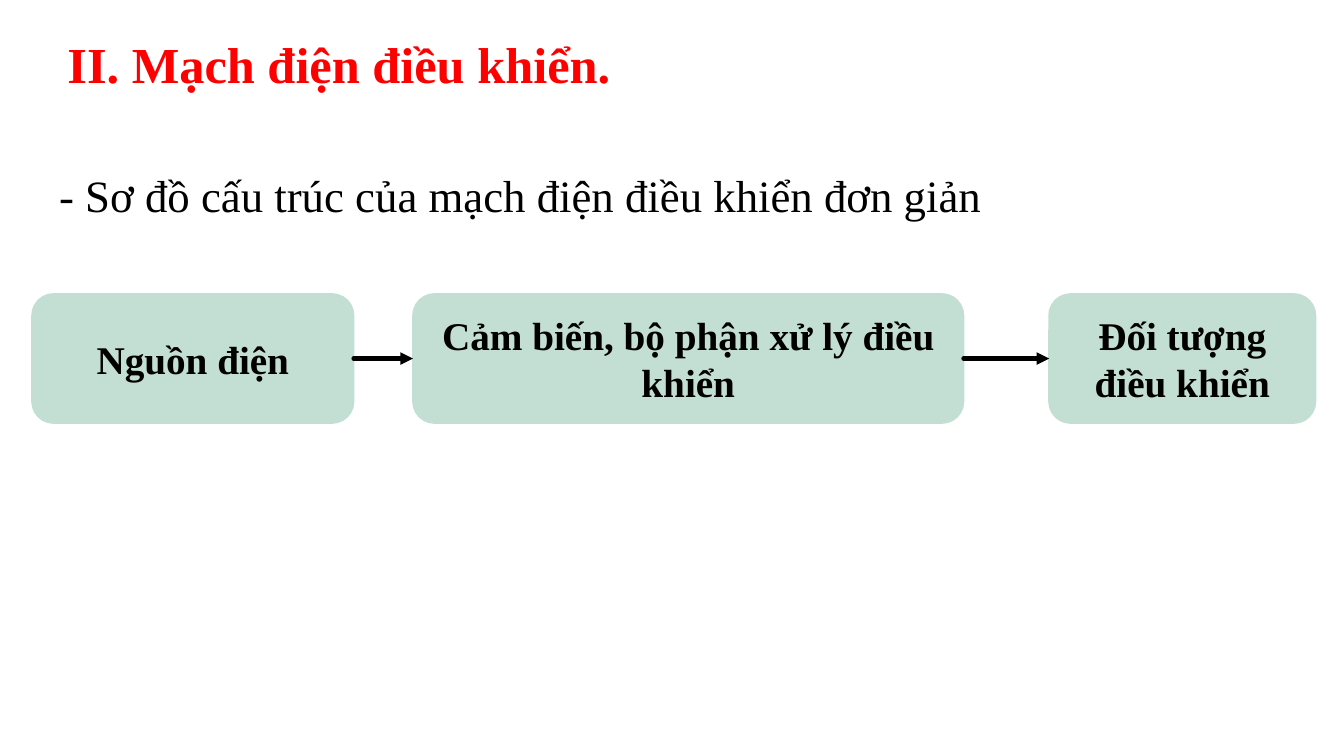
"""Build a slide showing the structure of a simple control circuit."""
from dataclasses import dataclass
from itertools import pairwise

from lxml import etree
from pptx import Presentation
from pptx.dml.color import RGBColor
from pptx.enum.shapes import MSO_CONNECTOR, MSO_SHAPE
from pptx.enum.text import MSO_ANCHOR, MSO_AUTO_SIZE, PP_ALIGN
from pptx.oxml.ns import qn
from pptx.shapes.autoshape import Shape
from pptx.slide import Slide
from pptx.text.text import TextFrame
from pptx.util import Cm, Pt

STRAIGHT = MSO_CONNECTOR.STRAIGHT
ROUNDED = MSO_SHAPE.ROUNDED_RECTANGLE
MIDDLE = MSO_ANCHOR.MIDDLE
FIT_SHAPE = MSO_AUTO_SIZE.SHAPE_TO_FIT_TEXT
LEFT, CENTER = PP_ALIGN.LEFT, PP_ALIGN.CENTER

BLACK = RGBColor(0x00, 0x00, 0x00)
RED = RGBColor(0xFF, 0x00, 0x00)
GREEN = RGBColor(0xC3, 0xDE, 0xD3)

FONT = "Times New Roman"
BLOCK_TOP, BLOCK_HEIGHT = 7.41, 3.25
LEFT_SIDE, RIGHT_SIDE = 1, 3


@dataclass(frozen=True)
class Heading:
    text: str
    left: float
    top: float
    width: float
    height: float
    size: int
    color: RGBColor
    bold: bool


@dataclass(frozen=True)
class Block:
    text: str
    left: float
    width: float


HEADINGS = [
    Heading("II. Mạch điện điều khiển.", 1.45, 0.71, 32, 1.8, 36, RED, True),
    Heading("- Sơ đồ cấu trúc của mạch điện điều khiển đơn giản",
            1.24, 4.11, 28.14, 1.63, 32, BLACK, False),
]
BLOCKS = [
    Block("Nguồn điện", 0.81, 8.1),
    Block("Cảm biến, bộ phận xử lý điều khiển", 10.41, 13.87),
    Block("Đối tượng điều khiển", 26.44, 6.71),
]


def write(tf: TextFrame, text: str, size: int, color: RGBColor,
          bold: bool, align: PP_ALIGN) -> None:
    tf.word_wrap = True
    p = tf.paragraphs[0]
    p.text = text
    p.alignment = align
    p.font.name = FONT
    p.font.size = Pt(size)
    p.font.bold = bold
    p.font.color.rgb = color


def add_heading(s: Slide, heading: Heading) -> None:
    sp = s.shapes.add_textbox(Cm(heading.left), Cm(heading.top),
                              Cm(heading.width), Cm(heading.height))
    write(sp.text_frame, heading.text, heading.size, heading.color,
          heading.bold, LEFT)
    sp.text_frame.auto_size = FIT_SHAPE


def add_block(s: Slide, block: Block) -> Shape:
    sp = s.shapes.add_shape(ROUNDED, Cm(block.left), Cm(BLOCK_TOP),
                            Cm(block.width), Cm(BLOCK_HEIGHT))
    sp.shadow.inherit = False
    sp.fill.solid()
    sp.fill.fore_color.rgb = GREEN
    sp.line.color.rgb = GREEN
    sp.line.width = Pt(1.25)
    sp.text_frame.vertical_anchor = MIDDLE
    write(sp.text_frame, block.text, 28, BLACK, True, CENTER)
    return sp


def add_arrow(s: Slide, start: Shape, end: Shape) -> None:
    arrow = s.shapes.add_connector(STRAIGHT, 0, 0, 0, 0)
    arrow.begin_connect(start, RIGHT_SIDE)
    arrow.end_connect(end, LEFT_SIDE)
    arrow.line.color.rgb = BLACK
    arrow.line.width = Pt(3)
    ln = arrow.line._get_or_add_ln()
    ln.set("cap", "rnd")
    etree.SubElement(ln, qn("a:tailEnd"), type="triangle")
    etree.SubElement(arrow._element.spPr, qn("a:effectLst"))


def main() -> None:
    prs = Presentation()
    prs.slide_width, prs.slide_height = Cm(33.87), Cm(19.05)
    s = prs.slides.add_slide(prs.slide_layouts[6])
    shapes = [add_block(s, block) for block in BLOCKS]
    for start, end in pairwise(shapes):
        add_arrow(s, start, end)
    for heading in HEADINGS:
        add_heading(s, heading)
    prs.save("out.pptx")


if __name__ == "__main__":
    main()
